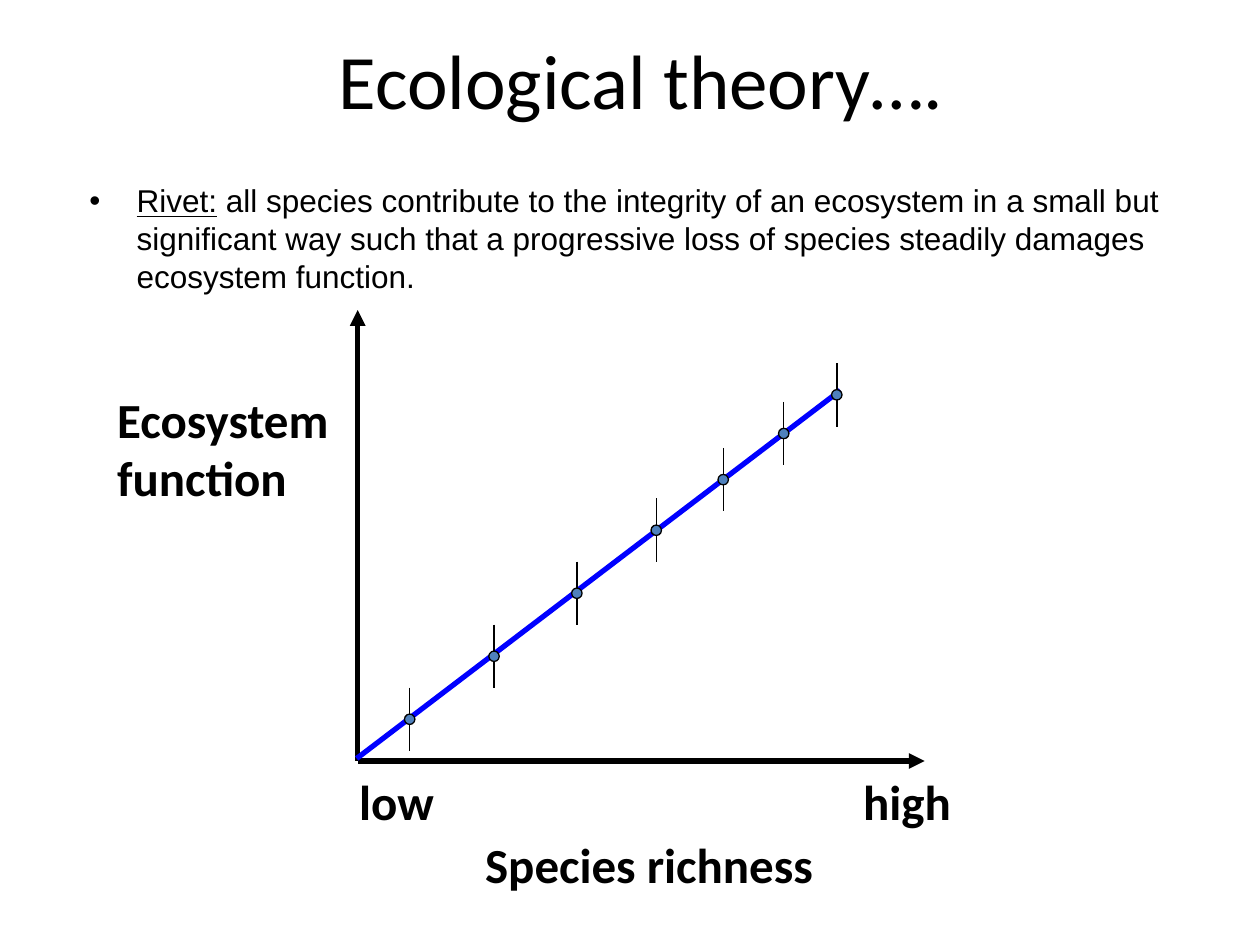
import pptx
import pptx.util
import pptx.dml.color
import pptx.enum.shapes
import pptx.enum.text
import pptx.oxml
import pptx.oxml.ns

Cm = pptx.util.Cm
Pt = pptx.util.Pt
TEXT = pptx.enum.text

COLORS = {"ink": "000000", "trend": "0000FF", "dot": "4F81BD"}

# Centre of each sample, in cm
SAMPLES = [(8.26, 14.5), (9.96, 13.23), (11.63, 11.96), (13.23, 10.69),
           (14.58, 9.67), (15.8, 8.74), (16.87, 7.96)]
ERROR = 0.64
DOT = 0.21
ORIGIN = (7.21, 15.34)


def color(name):
    return pptx.dml.color.RGBColor.from_string(COLORS[name])


def place(shape, left, top, width, height):
    shape.left, shape.top = Cm(left), Cm(top)
    shape.width, shape.height = Cm(width), Cm(height)


def write(para, text, font="Calibri", size=28, bold=False, under=False):
    run = para.add_run()
    run.text = text
    run.font.name = font
    run.font.size = Pt(size)
    run.font.bold = bold
    run.font.underline = under
    run.font.color.rgb = color("ink")


def label(slide, lines, *box):
    """Add a bold text box and return its frame."""
    frame = slide.shapes.add_textbox(*map(Cm, box)).text_frame
    frame.word_wrap = True
    for i, line in enumerate(lines):
        para = frame.add_paragraph() if i else frame.paragraphs[0]
        write(para, line, bold=True)
    return frame


def set_tab(para, pos):
    props = para._p.get_or_add_pPr()
    tabs = pptx.oxml.parse_xml(
        f'<a:tabLst {pptx.oxml.ns.nsdecls("a")}>'
        f'<a:tab pos="{Cm(pos)}" algn="l"/></a:tabLst>')
    props.append(tabs)


def line(slide, start, end, hue="ink", width=3, arrow=False):
    kind = pptx.enum.shapes.MSO_CONNECTOR.STRAIGHT
    link = slide.shapes.add_connector(kind, *map(Cm, start + end))
    link.line.color.rgb = color(hue)
    link.line.width = Pt(width)
    if arrow:
        tip = pptx.oxml.parse_xml(
            f'<a:tailEnd {pptx.oxml.ns.nsdecls("a")} type="triangle"/>')
        link.line._get_or_add_ln().append(tip)
    link._element.spPr.append(pptx.oxml.parse_xml(
        f'<a:effectLst {pptx.oxml.ns.nsdecls("a")}/>'))


def sample(slide, x, y):
    """Add a dot with its vertical error bar."""
    line(slide, (x, y - ERROR), (x, y + ERROR), width=0.75)
    box = (x - DOT / 2, y - DOT / 2, DOT, DOT)
    dot = slide.shapes.add_shape(
        pptx.enum.shapes.MSO_SHAPE.OVAL, *map(Cm, box))
    dot.shadow.inherit = False
    dot.fill.solid()
    dot.fill.fore_color.rgb = color("dot")
    dot.line.color.rgb = color("ink")
    dot.line.width = Pt(0.75)


def title(slide, text):
    shape = slide.shapes.title
    place(shape, 1.5, 0, 22.86, 3.18)
    frame = shape.text_frame
    frame.auto_size = TEXT.MSO_AUTO_SIZE.NONE
    frame.vertical_anchor = TEXT.MSO_ANCHOR.MIDDLE
    para = frame.paragraphs[0]
    para.alignment = TEXT.PP_ALIGN.CENTER
    write(para, text, size=44)


def body(slide, term, text):
    shape = slide.placeholders[1]
    place(shape, 1.55, 3.53, 22.71, 1.32)
    frame = shape.text_frame
    frame.auto_size = TEXT.MSO_AUTO_SIZE.NONE
    para = frame.paragraphs[0]
    props = para._p.get_or_add_pPr()
    props.set("marL", str(Cm(0.95)))
    props.set("indent", str(Cm(-0.95)))
    write(para, term, font="Arial", size=18, under=True)
    write(para, text, font="Arial", size=18)


def graph(slide):
    x, y = ORIGIN
    line(slide, ORIGIN, (x, 6.25), arrow=True)
    line(slide, ORIGIN, (18.64, y), arrow=True)
    label(slide, ["Ecosystem", "function"], 2.11, 7.72, 5.21, 2.62)
    label(slide, ["Species richness"], 9.53, 16.69, 7.5, 1.45)
    scale = label(slide, ["low\thigh"], 6.99, 15.42, 12.7, 1.45)
    set_tab(scale.paragraphs[0], 10.16)
    line(slide, (7.19, 15.29), (16.94, 7.87), hue="trend")
    for point in SAMPLES:
        sample(slide, *point)


def main():
    deck = pptx.Presentation()
    deck.slide_width, deck.slide_height = Cm(25.4), Cm(19.05)
    slide = deck.slides.add_slide(deck.slide_layouts[1])
    title(slide, "Ecological theory….")
    body(slide, "Rivet:",
         " all species contribute to the integrity of an ecosystem in a small"
         " but significant way such that a progressive loss of species"
         " steadily damages ecosystem function.")
    graph(slide)
    deck.save("out.pptx")


if __name__ == "__main__":
    main()
